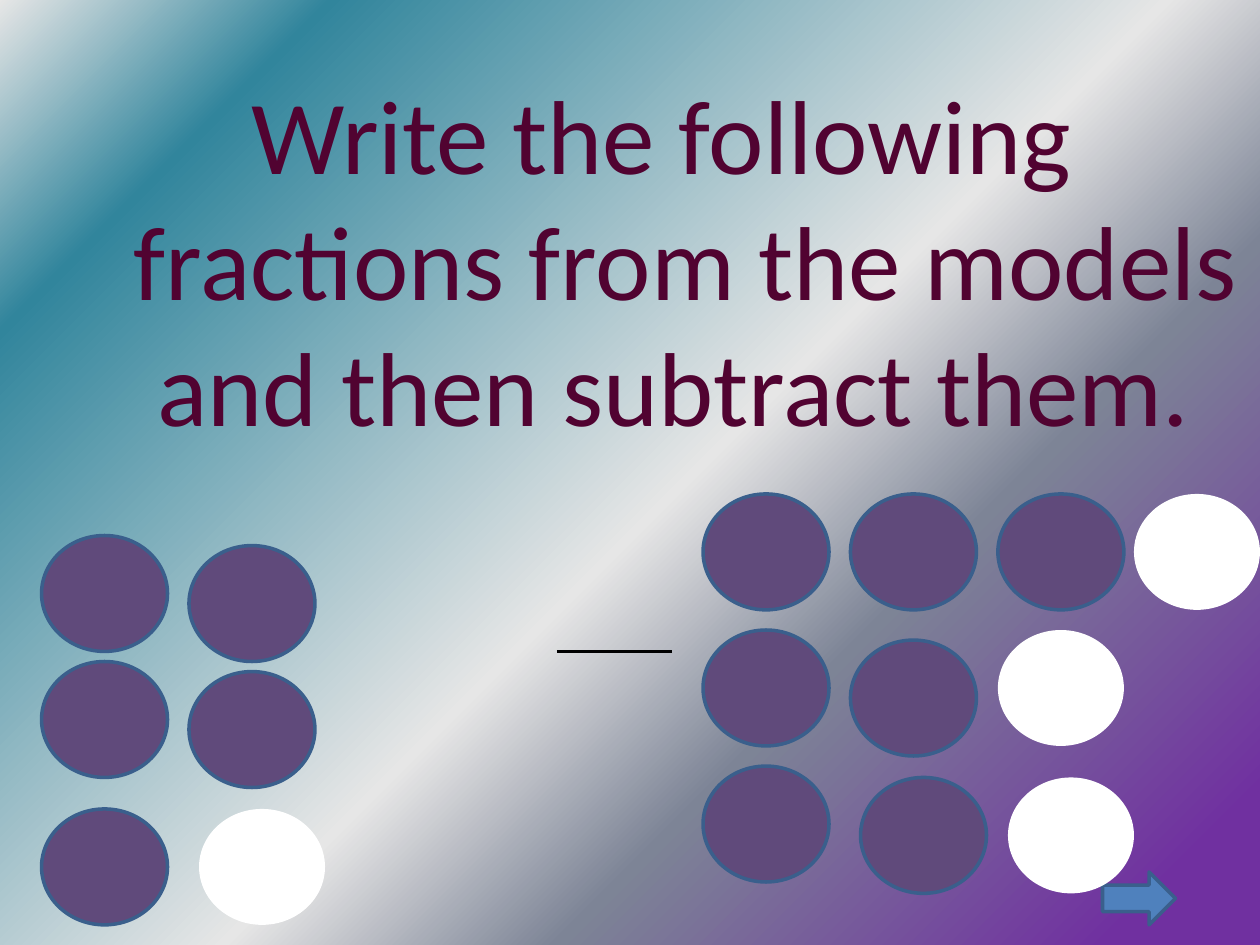
from lxml import etree
from pptx import Presentation
from pptx.dml.color import RGBColor
from pptx.enum.shapes import MSO_CONNECTOR, MSO_SHAPE
from pptx.enum.text import PP_ALIGN
from pptx.oxml.ns import qn
from pptx.util import Inches, Pt

ELLIPSE = MSO_SHAPE.OVAL
ARROW = MSO_SHAPE.RIGHT_ARROW
STRAIGHT = MSO_CONNECTOR.STRAIGHT
CENTER = PP_ALIGN.CENTER

PURPLE, WHITE, BLUE, OUTLINE = "604A7B", "FFFFFF", "4F81BD", "3A5F8C"
STOPS = [(0, "7030A0"), (7, "7030A0"), (32, "7D8496"),
         (47, "E6E6E6"), (85, "31859C"), (100, "E6E6E6")]
MODELS = [
    ([(0.33, 4.25), (1.5, 4.33), (0.33, 5.25), (1.5, 5.33), (0.33, 6.42)],
     [(1.58, 6.42)]),
    ([(5.58, 3.92), (6.75, 3.92), (7.92, 3.92), (5.58, 5), (6.75, 5.08),
      (5.58, 6.08), (6.83, 6.17)],
     [(9, 3.92), (7.92, 5), (8, 6.17)]),
]


def color(value):
    return RGBColor.from_string(value)


class SlideBuilder:
    font = "Calibri"
    text_color = "510331"
    line_width = Pt(2)

    def __init__(self, prs):
        self.s = prs.slides.add_slide(prs.slide_layouts[1])
        title = self.s.shapes.title
        title.element.getparent().remove(title.element)

    def background(self, stops):
        fill = self.s.background.fill
        fill.gradient()
        grad = next(self.s.element.iter(qn("a:gradFill")))
        for child in list(grad):
            grad.remove(child)
        gs_list = etree.SubElement(grad, qn("a:gsLst"))
        for pos, value in stops:
            gs = etree.SubElement(gs_list, qn("a:gs"), pos=str(pos * 1000))
            etree.SubElement(gs, qn("a:srgbClr"), val=value)
        circle = etree.SubElement(grad, qn("a:path"))
        circle.set("path", "circle")
        etree.SubElement(circle, qn("a:fillToRect"), l="100000", t="100000")
        etree.SubElement(grad, qn("a:tileRect"), r="-100000", b="-100000")

    def body(self, text, x, y, w, h, size):
        sp = self.s.placeholders[1]
        sp.left, sp.top, sp.width, sp.height = map(Inches, (x, y, w, h))
        p = sp.text_frame.paragraphs[0]
        p.alignment = CENTER
        pPr = p._p.get_or_add_pPr()
        pPr.set("marL", str(Inches(0.38)))
        pPr.set("indent", str(Inches(-0.38)))
        etree.SubElement(pPr, qn("a:buNone"))
        r = p.add_run()
        r.text = text
        r.font.name = self.font
        r.font.size = Pt(size)
        r.font.color.rgb = color(self.text_color)

    def shape(self, kind, x, y, w, h, fill, line=None):
        sp = self.s.shapes.add_shape(kind, *map(Inches, (x, y, w, h)))
        sp.shadow.inherit = False
        sp.fill.solid()
        sp.fill.fore_color.rgb = color(fill)
        if line:
            sp.line.color.rgb = color(line)
            sp.line.width = self.line_width
        else:
            sp.line.fill.background()

    def counter(self, x, y, fill, line=None):
        self.shape(ELLIPSE, x, y, 1, 0.92, fill, line)

    def line(self, x1, y1, x2, y2, value):
        cn = self.s.shapes.add_connector(STRAIGHT, *map(Inches, (x1, y1, x2, y2)))
        cn.line.color.rgb = color(value)
        cn.line.width = self.line_width
        etree.SubElement(cn._element.spPr, qn("a:effectLst"))


def main():
    prs = Presentation()
    prs.slide_width, prs.slide_height = Inches(10), Inches(7.5)
    b = SlideBuilder(prs)
    b.background(STOPS)
    b.body("Write the following fractions from the models and then subtract them. ",
           0.5, 0.5, 9.5, 6.2, 60)
    b.line(4.42, 5.17, 5.33, 5.17, "000000")
    b.shape(ARROW, 8.75, 6.92, 0.58, 0.42, BLUE, OUTLINE)
    for shaded, unshaded in MODELS:
        for x, y in shaded:
            b.counter(x, y, PURPLE, OUTLINE)
        for x, y in unshaded:
            b.counter(x, y, WHITE)
    prs.save("out.pptx")


if __name__ == "__main__":
    main()
